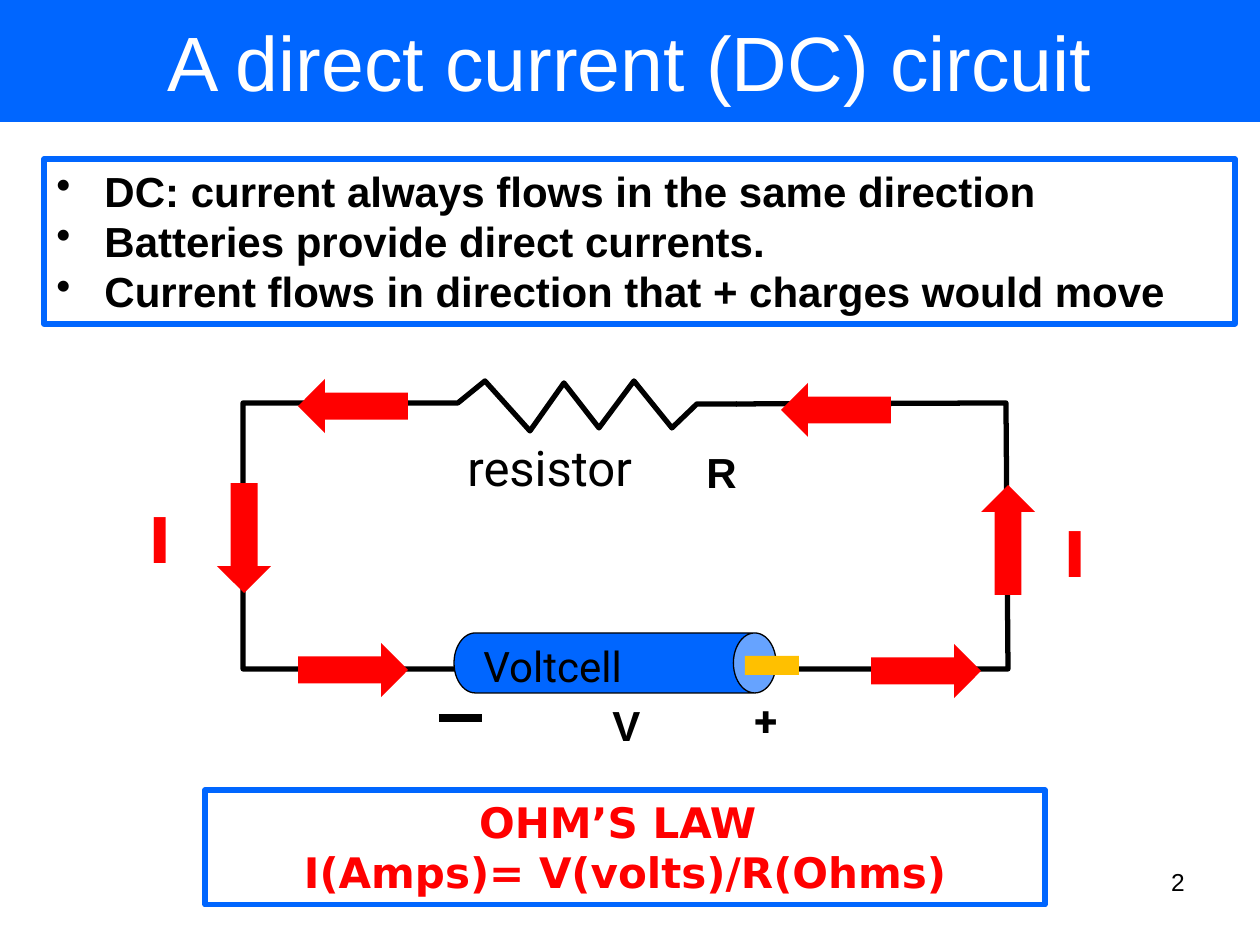
from dataclasses import dataclass

import pptx
import pptx.dml.color
import pptx.enum.shapes
import pptx.enum.text
import pptx.oxml
import pptx.oxml.ns
import pptx.util

SCALE = 914400 / 126
SHAPES = pptx.enum.shapes.MSO_SHAPE
ALIGN = pptx.enum.text.PP_ALIGN
ANCHOR = pptx.enum.text.MSO_ANCHOR
GROW = pptx.enum.text.MSO_AUTO_SIZE.SHAPE_TO_FIT_TEXT


@dataclass(frozen=True)
class Theme:
    blue: str = "0066FF"
    red: str = "FF0000"
    gold: str = "FFC000"
    black: str = "000000"
    white: str = "FFFFFF"
    sans: str = "Arial"
    formula: str = "DejaVu Sans"
    label: str = "Roboto"
    title_size: int = 44
    current_size: int = 36
    caption_size: int = 28
    body_size: int = 24
    number_size: int = 14
    frame_width: float = 3
    sign_width: float = 4.5
    outline_width: float = 0.75


THEME = Theme()


def px(length):
    return pptx.util.Emu(round(length * SCALE))


def color(value):
    return pptx.dml.color.RGBColor.from_string(value)


def set_line(line, value, width):
    line.color.rgb = color(value)
    line.width = pptx.util.Pt(width)


def add_box(page, kind, place, fill=None, line=None, width=THEME.frame_width):
    box = page.shapes.add_shape(kind, *map(px, place))
    box.shadow.inherit = False
    if fill:
        box.fill.solid()
        box.fill.fore_color.rgb = color(fill)
    else:
        box.fill.background()
    if line:
        set_line(box.line, line, width)
    else:
        box.line.fill.background()
    return box


def write(box, lines, font, size, ink, bold=False, align=ALIGN.LEFT, wrap=True, bullet=False):
    frame = box.text_frame
    frame.word_wrap = wrap
    frame.auto_size = GROW
    frame.vertical_anchor = ANCHOR.TOP
    for index, line in enumerate(lines):
        para = frame.paragraphs[0] if index == 0 else frame.add_paragraph()
        para.alignment = align
        if bullet:
            add_bullet(para)
        span = para.add_run()
        span.text = line
        span.font.name = font
        span.font.size = pptx.util.Pt(size)
        span.font.bold = bold
        span.font.color.rgb = color(ink)


def add_bullet(para):
    properties = para._p.get_or_add_pPr()
    properties.set("marL", str(px(48)))
    properties.set("indent", str(px(-48)))
    mark = pptx.oxml.parse_xml(f'<a:buChar {pptx.oxml.ns.nsdecls("a")} char="•"/>')
    properties.append(mark)


def add_label(page, place, text, font, size, ink=THEME.black, **style):
    box = page.shapes.add_textbox(*map(px, place))
    write(box, [text], font, size, ink, **style)


def add_wire(page, points):
    builder = page.shapes.build_freeform(*points[0], scale=SCALE)
    builder.add_line_segments(points[1:], close=False)
    wire = builder.convert_to_shape()
    wire.shadow.inherit = False
    wire.fill.background()
    set_line(wire.line, THEME.black, THEME.frame_width)


def add_sign(page, start, end):
    sign = page.shapes.add_connector(
        pptx.enum.shapes.MSO_CONNECTOR.STRAIGHT, *map(px, start + end))
    set_line(sign.line, THEME.black, THEME.sign_width)
    effects = pptx.oxml.parse_xml(f'<a:effectLst {pptx.oxml.ns.nsdecls("a")}/>')
    sign._element.spPr.append(effects)


def add_arrow(page, center_x, center_y, rotation):
    width, height = 54, 110
    place = (center_x - width / 2, center_y - height / 2, width, height)
    arrow = add_box(page, SHAPES.UP_ARROW, place, THEME.red)
    arrow.rotation = rotation


def add_panels(page):
    title = add_box(page, SHAPES.RECTANGLE, (0, 0, 1260, 122), THEME.blue)
    write(title, ["A direct current (DC) circuit"], THEME.sans, THEME.title_size,
          THEME.white, align=ALIGN.CENTER)
    frame = title.text_frame
    frame.auto_size = pptx.enum.text.MSO_AUTO_SIZE.NONE
    frame.vertical_anchor = ANCHOR.MIDDLE
    frame.margin_left = frame.margin_right = frame.margin_top = frame.margin_bottom = 0

    facts = add_box(page, SHAPES.RECTANGLE, (44, 159, 1191, 165), THEME.white, THEME.blue)
    write(facts, ["DC: current always flows in the same direction",
                  "Batteries provide direct currents.",
                  "Current flows in direction that + charges would move"],
          THEME.sans, THEME.body_size, THEME.black, bold=True, bullet=True)

    law = add_box(page, SHAPES.RECTANGLE, (205, 790, 840, 115), line=THEME.blue)
    write(law, ["OHM’S LAW ", "I(Amps)= V(volts)/R(Ohms)"], THEME.formula,
          THEME.body_size, THEME.red, bold=True, align=ALIGN.CENTER)


def add_circuit(page):
    for place in ((136, 494, 43, 89), (1051, 508, 86, 89)):
        add_label(page, place, "I", THEME.formula, THEME.current_size, THEME.red, bold=True)
    add_label(page, (600, 693, 53, 63), "V", THEME.sans, THEME.body_size, bold=True, wrap=False)

    add_wire(page, [(408, 403), (458, 403), (485, 381), (530, 431), (564, 383), (599, 428),
                    (634, 381), (672, 428), (697, 404), (737, 404)])
    add_label(page, (455, 431, 234, 72), "resistor", THEME.label, THEME.caption_size, wrap=False)
    add_label(page, (694, 440, 71, 63), "R", THEME.sans, THEME.body_size, bold=True, wrap=False)
    add_wire(page, [(408, 403), (243, 403), (243, 669), (1008, 669), (1006, 403), (736, 404)])

    battery = add_box(page, SHAPES.CAN, (585, 502, 60, 322), THEME.blue, THEME.black,
                      THEME.outline_width)
    battery.adjustments[0] = 0.71
    battery.rotation = 90
    add_label(page, (471, 634, 223, 63), "Voltcell", THEME.label, THEME.body_size, wrap=False)
    add_box(page, SHAPES.RECTANGLE, (745, 656, 54, 19), THEME.gold)
    add_label(page, (742, 688, 76, 63), "+", THEME.label, THEME.body_size, bold=True, wrap=False)
    add_sign(page, (439, 718), (482, 718))

    for arrow in ((1008, 540, 0), (244, 538, 180), (836, 410, 270),
                  (353, 406, 270), (353, 670, 90), (926, 671, 90)):
        add_arrow(page, *arrow)


def main():
    deck = pptx.Presentation()
    deck.slide_width, deck.slide_height = px(1260), px(945)
    page = deck.slides.add_slide(deck.slide_layouts[6])
    add_label(page, (903, 861, 294, 65), "2", THEME.sans, THEME.number_size, align=ALIGN.RIGHT)
    add_panels(page)
    add_circuit(page)
    deck.save("out.pptx")


if __name__ == "__main__":
    main()
